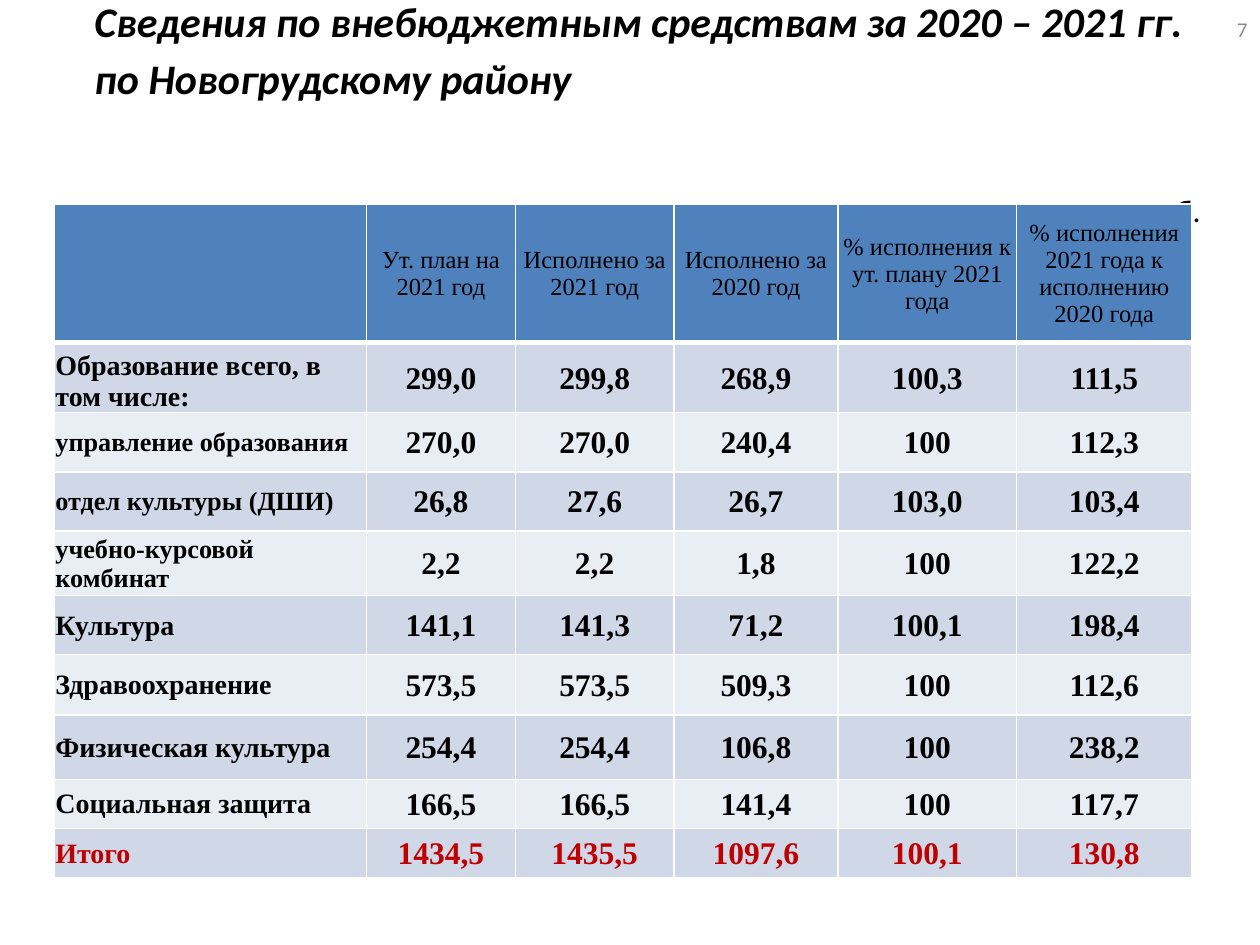
from lxml.etree import SubElement
from pptx import Presentation
from pptx.dml.color import RGBColor as RGB
from pptx.enum.text import MSO_ANCHOR as ANCHOR, PP_ALIGN as ALIGN
from pptx.oxml import parse_xml
from pptx.oxml.ns import nsdecls, qn
from pptx.util import Inches, Pt


class Theme:
    heading, body = "Calibri", "Times New Roman"
    black, red, grey, white = "000000", "C00000", "8C8C8C", "FFFFFF"
    header, bands = "4F81BD", ("D0D8E8", "E9EDF4")
    title, unit, number = 24, 18, 12
    head, section, detail, value = 14, 16, 15, 18
    thin, thick = 1, 3


def write(p, text, font=Theme.body, size=Theme.value, color=Theme.black,
          bold=False, italic=False, align=ALIGN.LEFT):
    p.alignment = align
    r = p.add_run()
    r.text = text
    r.font.name, r.font.size = font, Pt(size)
    r.font.bold, r.font.italic = bold, italic
    r.font.color.rgb = RGB.from_string(color)


def style_cell(cell, fill, top, bottom):
    """Fill the cell, tighten its margins and draw its borders, widths in points."""
    cell.margin_left = cell.margin_right = cell.margin_top = Inches(0.01)
    cell.margin_bottom = 0
    cell.vertical_anchor = ANCHOR.MIDDLE
    cell.fill.solid()
    cell.fill.fore_color.rgb = RGB.from_string(fill)
    tc_pr = cell._tc.get_or_add_tcPr()
    sides = {"lnL": Theme.thin, "lnR": Theme.thin, "lnT": top, "lnB": bottom}
    for i, (side, width) in enumerate(sides.items()):
        ln = parse_xml(f'<a:{side} {nsdecls("a")} w="{Pt(width)}"/>')
        color = SubElement(SubElement(ln, qn("a:solidFill")), qn("a:srgbClr"))
        color.set("val", Theme.white)
        tc_pr.insert(i, ln)


prs = Presentation()
prs.slide_width, prs.slide_height = Inches(10), Inches(7.5)
W, H = prs.slide_width, prs.slide_height
slide = prs.slides.add_slide(prs.slide_layouts[6])

# Title, with the unit of measure partly behind the table
sp = slide.shapes.add_textbox(int(0.055 * W), int(0.03 * H), int(0.9 * W), int(0.136 * H))
tf = sp.text_frame
tf.word_wrap = True
tf.vertical_anchor = ANCHOR.MIDDLE
tf.margin_left, tf.margin_right = Inches(0.2), Inches(0.02)
tf.margin_top, tf.margin_bottom = Inches(0.26), 0
title_lines = ("Сведения по внебюджетным средствам за 2020 – 2021 гг.",
               "по Новогрудскому району")
for i, line in enumerate(title_lines):
    p = tf.add_paragraph() if i else tf.paragraphs[0]
    p.line_spacing = Pt(32.5)
    write(p, line, font=Theme.heading, size=Theme.title, bold=True, italic=True)
p = tf.add_paragraph()
p.space_before = Pt(50)
write(p, "тыс. руб.", font=Theme.heading, size=Theme.unit, align=ALIGN.RIGHT)

# Table: column widths and row heights in percent of the slide
columns = (24.8, 11.8, 12.6, 13, 14.2, 13.9)
heights = (14.67, 7.4, 6.27, 6.27, 6.27, 6.27, 6.4, 6.8, 5.2, 5.2)
rows = (
    ("", "Ут. план на 2021 год", "Исполнено за 2021 год", "Исполнено за 2020 год",
     "% исполнения к ут. плану 2021 года", "% исполнения 2021 года к исполнению 2020 года"),
    ("Образование всего, в том числе:", "299,0", "299,8", "268,9", "100,3", "111,5"),
    ("управление образования", "270,0", "270,0", "240,4", "100", "112,3"),
    ("отдел культуры (ДШИ)", "26,8", "27,6", "26,7", "103,0", "103,4"),
    ("учебно-курсовой комбинат", "2,2", "2,2", "1,8", "100", "122,2"),
    ("Культура", "141,1", "141,3", "71,2", "100,1", "198,4"),
    ("Здравоохранение", "573,5", "573,5", "509,3", "100", "112,6"),
    ("Физическая культура", "254,4", "254,4", "106,8", "100", "238,2"),
    ("Социальная защита", "166,5", "166,5", "141,4", "100", "117,7"),
    ("Итого", "1434,5", "1435,5", "1097,6", "100,1", "130,8"),
)
table = slide.shapes.add_table(
    len(rows), len(columns), int(0.043 * W), int(0.216 * H),
    int(sum(columns) / 100 * W), int(sum(heights) / 100 * H)).table
for column, share in zip(table.columns, columns):
    column.width = int(share / 100 * W)
for row, share in zip(table.rows, heights):
    row.height = int(share / 100 * H)

for i, row in enumerate(rows):
    is_head, is_total = i == 0, i == len(rows) - 1
    label_size = Theme.detail if row[0][:1].islower() else Theme.section
    for j, text in enumerate(row):
        cell = table.cell(i, j)
        style_cell(cell, Theme.header if is_head else Theme.bands[(i - 1) % 2],
                   top=Theme.thick if i == 1 else Theme.thin,
                   bottom=Theme.thick if is_head else Theme.thin)
        if text:
            write(cell.text_frame.paragraphs[0], text,
                  size=Theme.head if is_head else Theme.value if j else label_size,
                  color=Theme.red if is_total else Theme.black,
                  bold=not is_head, align=ALIGN.CENTER if j else ALIGN.LEFT)
table.cell(1, 0).vertical_anchor = ANCHOR.BOTTOM

# Slide number
sp = slide.shapes.add_textbox(int(0.767 * W), int(0.004 * H), int(0.233 * W), int(0.053 * H))
tf = sp.text_frame
tf.word_wrap = True
tf.vertical_anchor = ANCHOR.MIDDLE
write(tf.paragraphs[0], "7", font=Theme.heading, size=Theme.number,
      color=Theme.grey, align=ALIGN.RIGHT)

prs.save("out.pptx")
